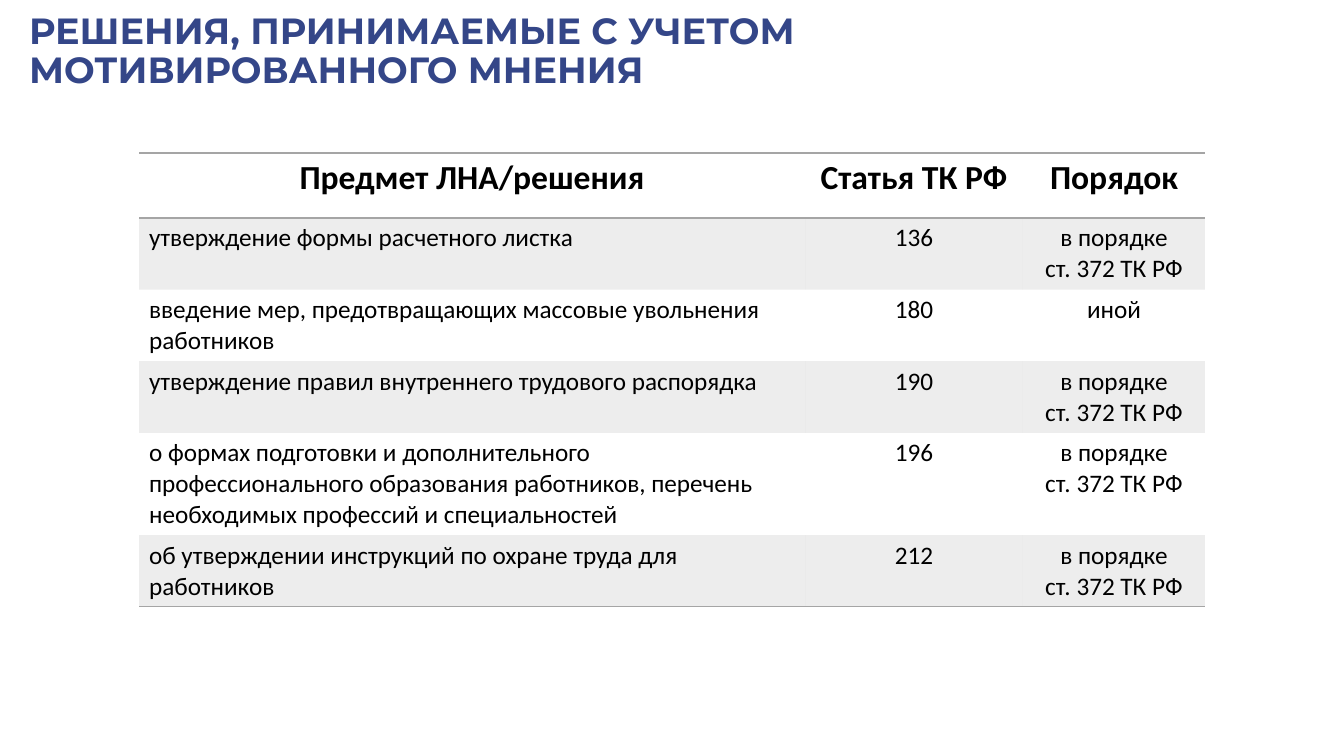
from lxml.etree import SubElement
from pptx import Presentation
from pptx.dml.color import RGBColor
from pptx.enum.text import MSO_ANCHOR, PP_ALIGN
from pptx.oxml.ns import qn
from pptx.util import Pt

PX = 914400 / 100.8
GRAY = "A5A5A5"
ORDER = ["в порядке", "ст. 372 ТК РФ"]


def px(length):
    return round(length * PX)


def add_run(paragraph, text, font_name, size, color, bold):
    run = paragraph.add_run()
    run.text = text
    run.font.name = font_name
    run.font.size = Pt(size)
    run.font.bold = bold
    run.font.color.rgb = RGBColor.from_string(color)


presentation = Presentation()
presentation.slide_width = px(1344)
presentation.slide_height = px(756)
slide = presentation.slides.add_slide(presentation.slide_layouts[5])

title = slide.shapes.title
title.left, title.top, title.width, title.height = px(19), px(19), px(1049), px(67)
title.text_frame.word_wrap = True
title.text_frame.vertical_anchor = MSO_ANCHOR.MIDDLE
title_paragraph = title.text_frame.paragraphs[0]
title_paragraph.alignment = PP_ALIGN.LEFT
title_paragraph.line_spacing = 0.9
add_run(title_paragraph, "РЕШЕНИЯ, ПРИНИМАЕМЫЕ С УЧЕТОМ МОТИВИРОВАННОГО МНЕНИЯ",
        "Montserrat", 26, "344688", True)

rows = [
    ("Предмет ЛНА/решения", "Статья ТК РФ", ["Порядок"]),
    ("утверждение формы расчетного листка", "136", ORDER),
    ("введение мер, предотвращающих массовые увольнения работников", "180", ["иной"]),
    ("утверждение правил внутреннего трудового распорядка", "190", ORDER),
    ("о формах подготовки и дополнительного профессионального образования работников, "
     "перечень необходимых профессий и специальностей", "196", ORDER),
    ("об утверждении инструкций по охране труда для работников", "212", ORDER),
]
column_widths = [666, 218, 182]
row_heights = [65, 71, 71, 71, 102, 71]

table_frame = slide.shapes.add_table(len(rows), len(column_widths), px(139), px(153),
                                     px(sum(column_widths)), px(sum(row_heights)))
table = table_frame.table
table.first_row = True
table.horz_banding = False
style_id = table_frame._element.find(".//" + qn("a:tableStyleId"))
style_id.text = "{2D5ABB26-0587-4C30-8999-92F81FD0307C}"

for column, width in zip(table.columns, column_widths):
    column.width = px(width)
for row, height in zip(table.rows, row_heights):
    row.height = px(height)

for row_index, (subject, article, order) in enumerate(rows):
    is_header = row_index == 0
    borders = {0: ["a:lnT", "a:lnB"], len(rows) - 1: ["a:lnB"]}.get(row_index, [])
    for column_index, lines in enumerate([[subject], [article], order]):
        cell = table.cell(row_index, column_index)
        properties = cell._tc.get_or_add_tcPr()
        for border in borders:
            line = SubElement(properties, qn(border), w=str(Pt(1)))
            line_fill = SubElement(line, qn("a:solidFill"))
            SubElement(line_fill, qn("a:srgbClr"), val=GRAY)

        if row_index % 2:
            cell.fill.solid()
            cell.fill.fore_color.rgb = RGBColor.from_string(GRAY)
            fill_color = properties.find(qn("a:solidFill")).find(qn("a:srgbClr"))
            SubElement(fill_color, qn("a:alpha"), val="20000")
        else:
            cell.fill.background()

        for line_index, text in enumerate(lines):
            frame = cell.text_frame
            paragraph = frame.add_paragraph() if line_index else frame.paragraphs[0]
            centered = is_header or column_index > 0
            paragraph.alignment = PP_ALIGN.CENTER if centered else PP_ALIGN.LEFT
            add_run(paragraph, text, "Calibri", 24 if is_header else 18, "000000", is_header)

presentation.save("out.pptx")
